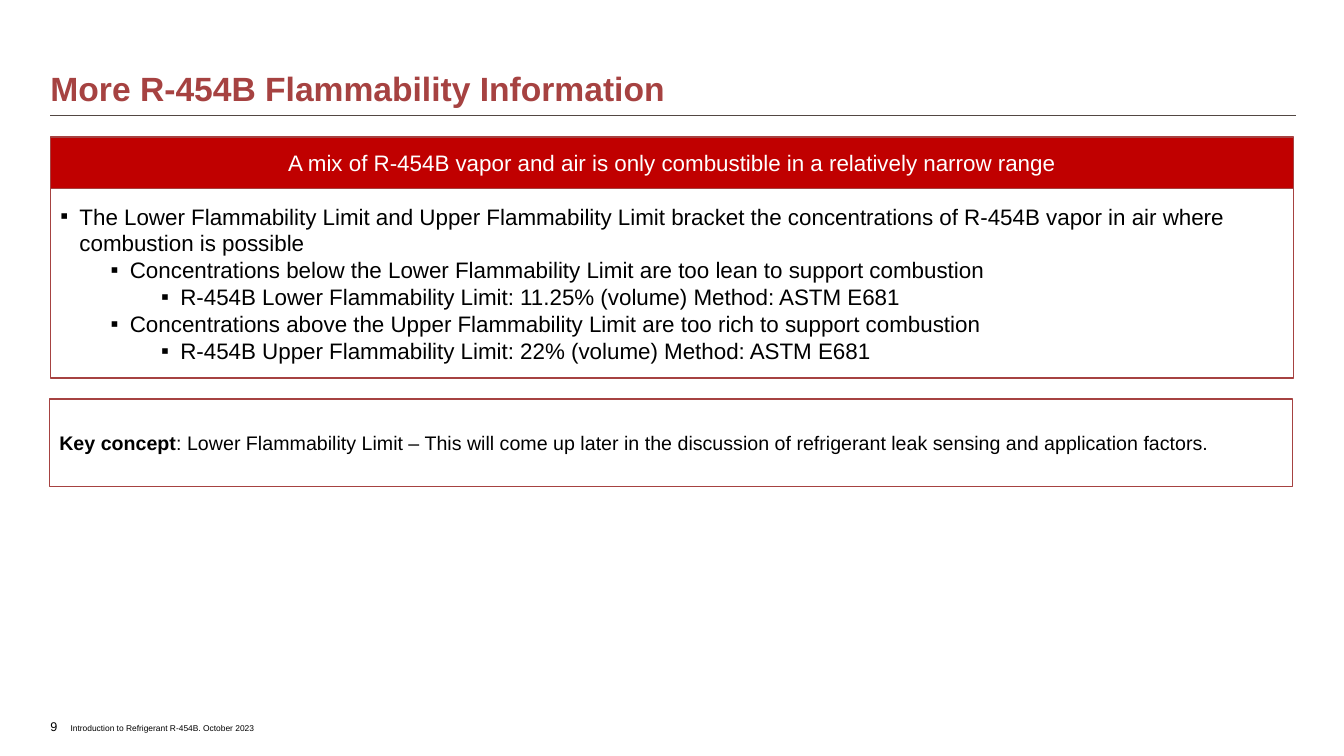
"""Build the slide on R-454B flammability limits."""
from lxml import etree
from pptx import Presentation
from pptx.dml.color import RGBColor
from pptx.enum.shapes import MSO_CONNECTOR, MSO_SHAPE
from pptx.enum.text import MSO_ANCHOR, PP_ALIGN
from pptx.oxml.ns import qn
from pptx.util import Inches, Pt

LEFT, CENTER = PP_ALIGN.LEFT, PP_ALIGN.CENTER
TOP, MIDDLE, BOTTOM = MSO_ANCHOR.TOP, MSO_ANCHOR.MIDDLE, MSO_ANCHOR.BOTTOM
RECT, STRAIGHT = MSO_SHAPE.RECTANGLE, MSO_CONNECTOR.STRAIGHT

COLORS = {"title": "A64241", "banner": "C00000", "rule": "524743",
          "text": "000000", "white": "FFFFFF"}
FONT = "Arial"

TITLE = "More R-454B Flammability Information"
BANNER = "A mix of R-454B vapor and air is only combustible in a relatively narrow range"
BULLETS = [
    (0, "The Lower Flammability Limit and Upper Flammability Limit bracket the "
        "concentrations of R-454B vapor in air where combustion is possible"),
    (1, "Concentrations below the Lower Flammability Limit are too lean to support combustion"),
    (2, "R-454B Lower Flammability Limit: 11.25% (volume) Method: ASTM E681"),
    (1, "Concentrations above the Upper Flammability Limit are too rich to support combustion"),
    (2, "R-454B Upper Flammability Limit: 22% (volume) Method: ASTM E681"),
]
KEY_TERM = "Key concept"
KEY_TEXT = (": Lower Flammability Limit – This will come up later in the discussion of "
            "refrigerant leak sensing and application factors.")
PAGE = "9"
FOOTER = "Introduction to Refrigerant R-454B. October 2023"

MARGIN, RULE_Y, BOX_WIDTH = 0.5, 1.15, 12.33
BANNER_TOP, BANNER_HEIGHT = 1.36, 0.51
HANG, LEVEL_STEP = 0.19, 0.5


def rgb(name):
    return RGBColor.from_string(COLORS[name])


def format_runs(p, size, color="text", bold=False, align=LEFT):
    p.alignment = align
    for r in p.runs:
        r.font.name = FONT
        r.font.size = Pt(size)
        r.font.bold = bold
        r.font.color.rgb = rgb(color)


def prepare_frame(tf, anchor, inset=None):
    tf.word_wrap = True
    tf.vertical_anchor = anchor
    if inset is not None:
        tf.margin_left = tf.margin_right = tf.margin_top = tf.margin_bottom = Inches(inset)


def add_box(s, left, top, height, fill=None):
    sp = s.shapes.add_shape(RECT, Inches(left), Inches(top), Inches(BOX_WIDTH), Inches(height))
    sp.shadow.inherit = False
    if fill:
        sp.fill.solid()
        sp.fill.fore_color.rgb = rgb(fill)
    else:
        sp.fill.background()
    sp.line.color.rgb = rgb("title")
    sp.line.width = Pt(1)
    prepare_frame(sp.text_frame, MIDDLE)
    return sp.text_frame


def add_label(s, text, left, top, width, height, size, anchor):
    sp = s.shapes.add_textbox(Inches(left), Inches(top), Inches(width), Inches(height))
    tf = sp.text_frame
    prepare_frame(tf, anchor, 0)
    tf.text = text
    format_runs(tf.paragraphs[0], size)


def set_bullet(p, level):
    p.level = level
    pPr = p._p.get_or_add_pPr()
    pPr.set("marL", str(Inches(HANG + LEVEL_STEP * level)))
    pPr.set("indent", str(-Inches(HANG)))
    etree.SubElement(pPr, qn("a:buFont"), typeface=FONT)
    etree.SubElement(pPr, qn("a:buChar"), char="▪")


def add_title(s):
    sp = s.shapes.title
    sp.left, sp.top, sp.width, sp.height = map(Inches, (MARGIN, 0.21, 12.35, 0.87))
    tf = sp.text_frame
    prepare_frame(tf, BOTTOM, 0)
    tf.text = TITLE
    tf.paragraphs[0].line_spacing = 0.9
    format_runs(tf.paragraphs[0], 24, "title", True)


def add_rule(s):
    rule = s.shapes.add_connector(STRAIGHT, Inches(MARGIN), Inches(RULE_Y),
                                  Inches(12.85), Inches(RULE_Y))
    rule.line.color.rgb = rgb("rule")
    rule.line.width = Pt(0.75)
    etree.SubElement(rule._element.spPr, qn("a:effectLst"))


def main():
    prs = Presentation()
    prs.slide_width, prs.slide_height = Inches(13.33), Inches(7.5)
    s = prs.slides.add_slide(prs.slide_layouts[5])

    add_rule(s)
    add_label(s, PAGE, MARGIN, 7.09, 0.39, 0.24, 9, MIDDLE)
    add_label(s, FOOTER, 0.7, 7.17, 2.2, 0.1, 6, TOP)
    add_title(s)

    tf = add_box(s, MARGIN, BANNER_TOP, BANNER_HEIGHT, "banner")
    tf.text = BANNER
    format_runs(tf.paragraphs[0], 16, "white", align=CENTER)

    tf = add_box(s, MARGIN, BANNER_TOP + BANNER_HEIGHT, 1.88)
    tf.text = "\n".join(text for _, text in BULLETS)
    for p, (level, _) in zip(tf.paragraphs, BULLETS):
        set_bullet(p, level)
        format_runs(p, 16)

    tf = add_box(s, 0.49, 3.96, 0.87)
    p = tf.paragraphs[0]
    for text in (KEY_TERM, KEY_TEXT):
        p.add_run().text = text
    format_runs(p, 14)
    p.runs[0].font.bold = True

    prs.save("out.pptx")


if __name__ == "__main__":
    main()
